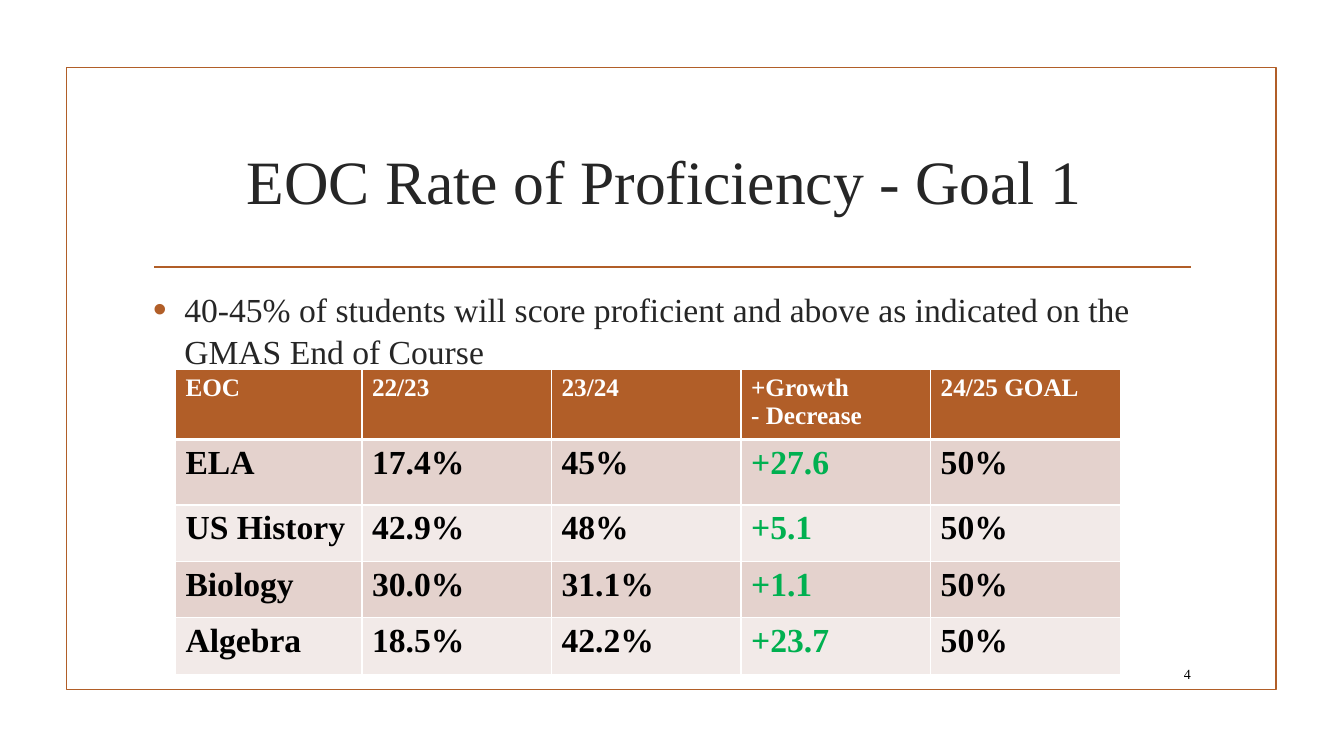
from lxml.etree import SubElement
from pptx import Presentation
from pptx.dml.color import RGBColor
from pptx.enum.shapes import MSO_CONNECTOR as Connector, MSO_SHAPE as Shape
from pptx.enum.text import MSO_ANCHOR as Anchor, PP_ALIGN as Align
from pptx.oxml.ns import qn
from pptx.util import Inches, Pt

# Content
TITLE = "EOC Rate of Proficiency - Goal 1 "
GOAL = ("40-45% of students will score proficient and above "
        "as indicated on the GMAS End of Course")
PAGE_NUMBER = "4"
RESULTS = [
    ("EOC", "22/23", "23/24", "+Growth\n- Decrease", "24/25 GOAL"),
    ("ELA", "17.4%", "45%", "+27.6", "50%"),
    ("US History", "42.9%", "48%", "+5.1", "50%"),
    ("Biology", "30.0%", "31.1%", "+1.1", "50%"),
    ("Algebra", "18.5%", "42.2%", "+23.7", "50%"),
]
GROWTH_COLUMN = 3

# Format
FONT = "Times New Roman"
RUST, INK, BLACK, WHITE, GREEN = "B15E28", "262626", "000000", "FFFFFF", "00B050"
BANDS = ("E4D2CD", "F2EAE8")

# Layout in inches
SLIDE_WIDTH, SLIDE_HEIGHT = 13.33, 7.5
FRAME = (0.66, 0.67, 12, 6.17)
RULE_LEFT, RULE_RIGHT, RULE_TOP = 1.53, 11.81, 2.65
TEXT_LEFT, TEXT_WIDTH = 1.42, 10.5
TABLE_LEFT, TABLE_TOP = 1.74, 3.66
COLUMN_WIDTHS = [1.85] + [1.88] * 4
ROW_HEIGHTS = [0.65] * 2 + [0.56] * 3


def color(value):
    return RGBColor.from_string(value)


def write(frame, text, size=24, ink=INK, bold=False, align=Align.LEFT,
          anchor=Anchor.TOP, bullet=None, spacing=None):
    frame.word_wrap = True
    frame.vertical_anchor = anchor
    for index, line in enumerate(text.split("\n")):
        paragraph = frame.paragraphs[0] if index == 0 else frame.add_paragraph()
        paragraph.alignment = align
        if spacing:
            paragraph.line_spacing = spacing
        if bullet:
            add_bullet(paragraph, bullet)
        run = paragraph.add_run()
        run.text = line
        run.font.name, run.font.size, run.font.bold = FONT, Pt(size), bold
        run.font.color.rgb = color(ink)


def add_bullet(paragraph, character):
    properties = paragraph._p.get_or_add_pPr()
    properties.set("marL", str(Inches(0.31)))
    properties.set("indent", str(-Inches(0.31)))
    bullet_color = SubElement(properties, qn("a:buClr"))
    SubElement(bullet_color, qn("a:srgbClr"), val=RUST)
    SubElement(properties, qn("a:buSzPct"), val="115000")
    SubElement(properties, qn("a:buFont"), typeface="Arial")
    SubElement(properties, qn("a:buChar"), char=character)


def add_text(slide, box, text, **text_format):
    textbox = slide.shapes.add_textbox(*map(Inches, box))
    write(textbox.text_frame, text, **text_format)


def add_borders(cell, bottom):
    properties = cell._tc.get_or_add_tcPr()
    widths = {"a:lnL": 1, "a:lnR": 1, "a:lnT": 1, "a:lnB": bottom}
    for position, (tag, width) in enumerate(widths.items()):
        line = SubElement(properties, qn(tag), w=str(Pt(width)))
        fill = SubElement(line, qn("a:solidFill"))
        SubElement(fill, qn("a:srgbClr"), val=WHITE)
        properties.insert(position, line)  # borders come before the fill


def add_frame(slide):
    frame = slide.shapes.add_shape(Shape.RECTANGLE, *map(Inches, FRAME))
    frame.shadow.inherit = False
    frame.fill.background()
    rule = slide.shapes.add_connector(
        Connector.STRAIGHT, *map(Inches, (RULE_LEFT, RULE_TOP, RULE_RIGHT, RULE_TOP)))
    SubElement(rule._element.spPr, qn("a:effectLst"))
    for shape in (frame, rule):
        shape.line.color.rgb = color(RUST)
        shape.line.width = Pt(1.25)


def add_results(slide):
    box = (TABLE_LEFT, TABLE_TOP, sum(COLUMN_WIDTHS), sum(ROW_HEIGHTS))
    table = slide.shapes.add_table(
        len(RESULTS), len(COLUMN_WIDTHS), *map(Inches, box)).table
    for column, width in zip(table.columns, COLUMN_WIDTHS):
        column.width = Inches(width)
    for row, height in zip(table.rows, ROW_HEIGHTS):
        row.height = Inches(height)
    for row, values in enumerate(RESULTS):
        header = row == 0
        for column, value in enumerate(values):
            cell = table.cell(row, column)
            cell.fill.solid()
            cell.fill.fore_color.rgb = color(RUST if header else BANDS[(row - 1) % 2])
            add_borders(cell, bottom=3 if header else 1)
            body_ink = GREEN if column == GROWTH_COLUMN else BLACK
            write(cell.text_frame, value, bold=True, size=18 if header else 24,
                  ink=WHITE if header else body_ink)


def main():
    presentation = Presentation()
    presentation.slide_width = Inches(SLIDE_WIDTH)
    presentation.slide_height = Inches(SLIDE_HEIGHT)
    slide = presentation.slides.add_slide(presentation.slide_layouts[6])

    # Frame, heading and goal
    add_frame(slide)
    add_text(slide, (TEXT_LEFT, 1.07, TEXT_WIDTH, 1.43), TITLE,
             size=44, align=Align.CENTER, anchor=Anchor.MIDDLE)
    add_text(slide, (TEXT_LEFT, 2.8, TEXT_WIDTH, 3.83), GOAL,
             bullet="•", spacing=1.04)

    # Page number and results
    add_text(slide, (11.32, 6.53, 0.59, 0.31), PAGE_NUMBER, size=10, ink=BLACK,
             align=Align.RIGHT, anchor=Anchor.MIDDLE)
    add_results(slide)
    presentation.save("out.pptx")


if __name__ == "__main__":
    main()
